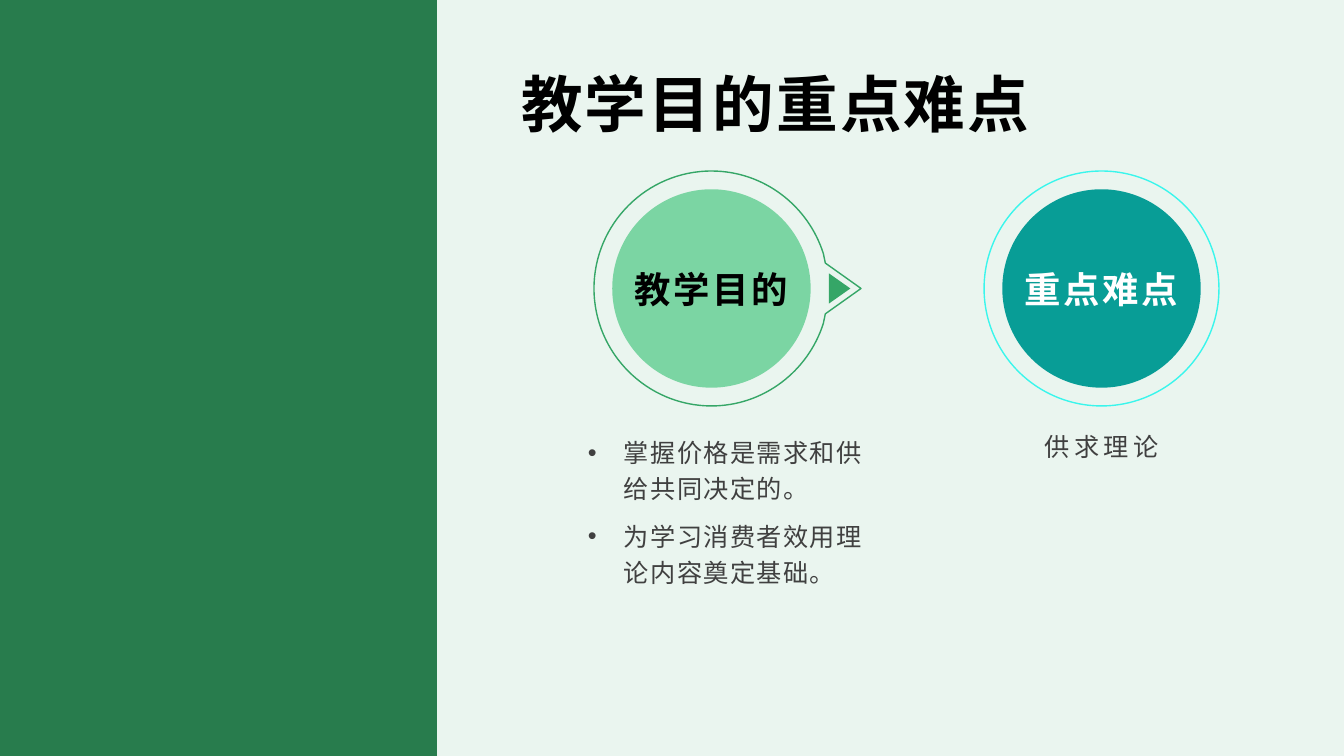
from lxml import etree
from pptx import Presentation
from pptx.dml.color import RGBColor
from pptx.enum.shapes import MSO_SHAPE
from pptx.enum.text import MSO_ANCHOR, MSO_AUTO_SIZE, PP_ALIGN
from pptx.oxml.ns import qn
from pptx.util import Cm, Pt

OVAL, RECT, TRIANGLE = MSO_SHAPE.OVAL, MSO_SHAPE.RECTANGLE, MSO_SHAPE.ISOSCELES_TRIANGLE
CENTER, LEFT, JUSTIFY = PP_ALIGN.CENTER, PP_ALIGN.LEFT, PP_ALIGN.JUSTIFY
FONT = "Noto Sans CJK SC"
GREEN = "35A667"
MID_Y, DISC, RING = 7.27, 2.5, 2.96


def paint(shape, fill=None, line=None):
    """Set fill and outline; None means no fill or no outline."""
    shape.shadow.inherit = False
    if fill:
        shape.fill.solid()
        shape.fill.fore_color.rgb = RGBColor.from_string(fill)
    else:
        shape.fill.background()
    if line:
        shape.line.color.rgb = RGBColor.from_string(line)
        shape.line.width = Pt(1)
    else:
        shape.line.fill.background()


def write(shape, box, text, size, color, gap, align, bold=False):
    """Place a text shape and format its text; gap is letter spacing in points."""
    shape.left, shape.top, shape.width, shape.height = [Cm(n) for n in box]
    frame = shape.text_frame
    frame.text = text
    frame.word_wrap = True
    frame.auto_size = MSO_AUTO_SIZE.NONE
    frame.vertical_anchor = MSO_ANCHOR.TOP
    for para in frame.paragraphs:
        para.alignment = align
        para.line_spacing = 1.0
        para.space_before = Pt(0)
        run = para.runs[0]
        font = run.font
        font.size, font.bold, font.name = Pt(size), bold, FONT
        font.color.rgb = RGBColor.from_string(color)
        props = run._r.get_or_add_rPr()
        props.set("spc", str(round(gap * 100)))
        etree.SubElement(props, qn("a:ea")).set("typeface", FONT)
    return frame


deck = Presentation()
deck.slide_width, deck.slide_height = Cm(33.87), Cm(19.05)
slide = deck.slides.add_slide(deck.slide_layouts[3])
shapes = slide.shapes
title, goals, focus = slide.placeholders
slide.background.fill.solid()
slide.background.fill.fore_color.rgb = RGBColor.from_string("EAF5EF")

panel = shapes.add_shape(RECT, 0, 0, Cm(11.01), deck.slide_height)
paint(panel, "287C4D")

frame = write(title, (12.95, 0.28, 14.3, 3.33), "教学目的重点难点", 44, "000000", 1.6, JUSTIFY, True)
frame.vertical_anchor = MSO_ANCHOR.BOTTOM
frame.margin_left = frame.margin_right = Cm(0.18)
frame.margin_top = frame.margin_bottom = Cm(0.08)

# Discs with their labels
topics = [
    (17.93, "教学目的", "7BD5A3", "000000"),
    (27.76, "重点难点", "089D96", "FFFFFF"),
]
for mid, name, fill, color in topics:
    disc = shapes.add_shape(OVAL, Cm(mid - DISC), Cm(MID_Y - DISC), Cm(2 * DISC), Cm(2 * DISC))
    paint(disc, fill)
    label = shapes.add_textbox(0, 0, 0, 0)
    write(label, (mid - 2.26, 6.6, 4.52, 1.57), name, 26, color, 1.8, CENTER, True)

# Left ring with a pointed notch: corners measured from the ring's centre
mid = topics[0][0]
bend = 0.55 * RING
corners = [
    (2.82, -0.88), (2.87, -0.64), (3.77, 0), (2.87, 0.64), (2.82, 0.88),
    (0, RING), (-RING, 0), (0, -RING),
]
# Control points of the curved sides, by number of side
curves = {
    0: [(1.32, -RING), (2.44, -2.08)],
    5: [(2.44, 2.08), (1.32, RING)],
    6: [(-bend, RING), (-RING, bend)],
    7: [(-RING, -bend), (-bend, -RING)],
}
pen = shapes.build_freeform(Cm(mid), Cm(MID_Y - RING))
pen.add_line_segments([(Cm(mid + x), Cm(MID_Y + y)) for x, y in corners])
notch = pen.convert_to_shape()
paint(notch, line=GREEN)
sides = list(notch._element.iter(qn("a:lnTo")))
for side, pair in curves.items():
    sides[side].tag = qn("a:cubicBezTo")
    for place, (x, y) in enumerate(pair):
        point = etree.Element(qn("a:pt"), x=str(Cm(RING + x)), y=str(Cm(RING + y)))
        sides[side].insert(place, point)

arrow = shapes.add_shape(TRIANGLE, Cm(20.78), Cm(MID_Y - 0.27), Cm(0.76), Cm(0.54))
arrow.rotation = 90
paint(arrow, GREEN)

# Right ring
ring = shapes.add_shape(
    OVAL, Cm(topics[1][0] - RING), Cm(MID_Y - RING), Cm(2 * RING), Cm(2 * RING)
)
paint(ring, line="3AF5EC")

# Text under the discs
points = "掌握价格是需求和供给共同决定的。\n为学习消费者效用理论内容奠定基础。"
frame = write(goals, (14.56, 10.74, 7.47, 6.3), points, 18, "404040", 1, LEFT)
for para in frame.paragraphs:
    para.line_spacing = 1.2
    para.space_after = Pt(8)
    props = para._p.get_or_add_pPr()
    props.set("marL", str(Cm(0.91)))
    props.set("indent", str(-Cm(0.91)))
    etree.SubElement(props, qn("a:buFont")).set("typeface", "Arial")
    etree.SubElement(props, qn("a:buChar")).set("char", "•")

frame = write(focus, (24.4, 10.74, 6.73, 6.3), "供求理论", 18, "404040", 3.2, CENTER)
para = frame.paragraphs[0]
para.space_after = Pt(8)
props = para._p.get_or_add_pPr()
props.set("marL", "0")
props.set("indent", "0")
etree.SubElement(props, qn("a:buNone"))

deck.save("out.pptx")
